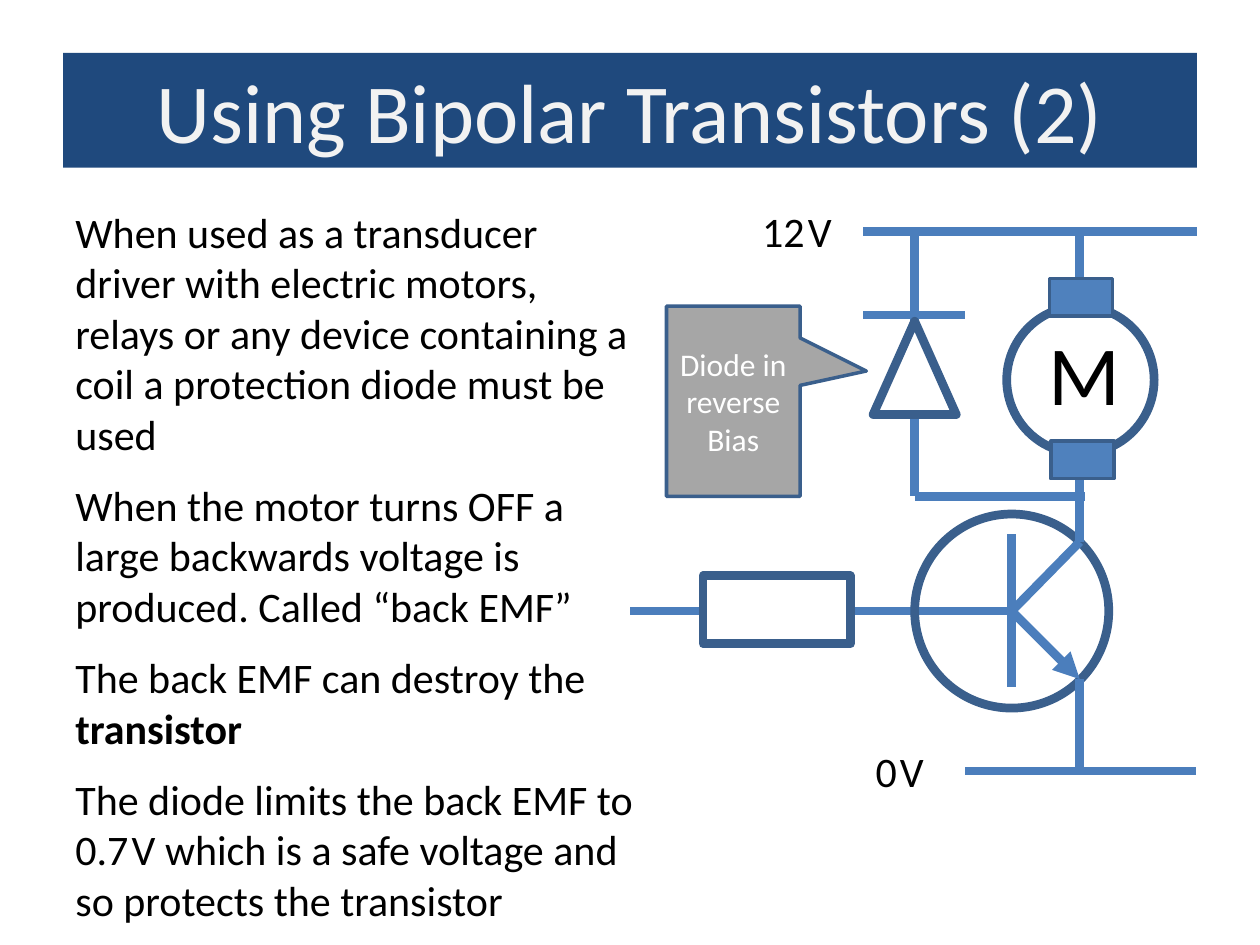
from dataclasses import dataclass

from pptx import Presentation
from pptx.dml.color import RGBColor
from pptx.enum.shapes import MSO_CONNECTOR, MSO_SHAPE
from pptx.enum.text import MSO_ANCHOR, MSO_AUTO_SIZE, PP_ALIGN
from pptx.oxml.ns import qn
from pptx.util import Inches, Pt
from lxml import etree

STRAIGHT = MSO_CONNECTOR.STRAIGHT
OVAL, RECT = MSO_SHAPE.OVAL, MSO_SHAPE.RECTANGLE
TRIANGLE, CALLOUT = MSO_SHAPE.ISOSCELES_TRIANGLE, MSO_SHAPE.RECTANGULAR_CALLOUT
TOP, MIDDLE = MSO_ANCHOR.TOP, MSO_ANCHOR.MIDDLE
LEFT, CENTER = PP_ALIGN.LEFT, PP_ALIGN.CENTER
NO_FIT = MSO_AUTO_SIZE.NONE


@dataclass(frozen=True)
class Theme:
    font: str = "Calibri"
    banner: str = "1F497D"
    banner_text: str = "F2F2F2"
    text: str = "000000"
    wire: str = "4B7EBC"
    outline: str = "3A5F8C"
    terminal: str = "4F81BD"
    note: str = "A6A6A6"
    note_text: str = "FFFFFF"
    heading: int = 48
    body: int = 24
    small: int = 18
    gap: int = 8
    thick: int = 5
    thin: int = 2


T = Theme()
GAP = (" ", {"size": Pt(T.gap)})

BODY = [
    ["When used as a transducer driver with electric motors, relays or any "
     "device containing a coil a protection diode must be used"],
    ["When the motor turns OFF a large backwards voltage is produced. "
     "Called “back EMF”"],
    ["The back EMF can destroy the ", ("transistor", {"bold": True})],
    ["The diode limits the back EMF to 0.7", GAP,
     "V which is a safe voltage and so protects the transistor"],
]

SUPPLY_Y, GROUND_Y = 1.84, 6.12
BASE_X, BASE_Y = 8.03, 4.85
MOTOR_X, DIODE_X = 8.57, 7.26
COLLECTOR_Y, EMITTER_Y = 4.3, 5.39
CATHODE_Y, ANODE_Y, JOIN_Y = 2.5, 3.29, 3.94

WIRES = [
    (BASE_X, 4.24, BASE_X, 5.45),
    (6.76, BASE_Y, BASE_X, BASE_Y),
    (5, BASE_Y, 5.58, BASE_Y),
    (6.85, SUPPLY_Y, 9.5, SUPPLY_Y),
    (7.66, GROUND_Y, 9.49, GROUND_Y),
    (MOTOR_X, SUPPLY_Y, MOTOR_X, 2.43),
    (6.85, CATHODE_Y, 7.66, CATHODE_Y),
    (DIODE_X, SUPPLY_Y, DIODE_X, 2.55),
    (DIODE_X, ANODE_Y, DIODE_X, JOIN_Y),
    (DIODE_X, JOIN_Y, 8.61, JOIN_Y),
]
TRANSISTOR_LEGS = [
    (BASE_X, BASE_Y, MOTOR_X, COLLECTOR_Y),
    (MOTOR_X, COLLECTOR_Y, MOTOR_X, 3.58),
    (MOTOR_X, EMITTER_Y, MOTOR_X, GROUND_Y),
]
OUTLINES = [
    (OVAL, 7.26, 4.08, 1.54, 1.54),
    (OVAL, 7.99, 2.43, 1.17, 1.17),
    (RECT, 5.58, 4.57, 1.17, 0.54),
    (TRIANGLE, 6.93, 2.55, 0.66, 0.74),
]
TERMINALS = [(RECT, 8.33, 2.21, 0.5, 0.3), (RECT, 8.34, 3.5, 0.5, 0.3)]
LABELS = [
    (["12", GAP, "V"], T.body, 5.95, 1.58, 0.76, 0.5),
    (["0", GAP, "V"], T.body, 6.85, 5.87, 0.59, 0.5),
    (["M"], T.heading, 8.22, 2.5, 0.78, 0.91),
]


def rgb(value):
    return RGBColor.from_string(value)


def apply(target, values):
    for name, value in values.items():
        setattr(target, name, value)


def write(tf, paragraphs, size, color, align=LEFT, after=0, **frame):
    apply(tf, {"auto_size": NO_FIT, "word_wrap": True, **frame})
    for i, runs in enumerate(paragraphs):
        p = tf.paragraphs[0] if i == 0 else tf.add_paragraph()
        apply(p, {"alignment": align, "space_after": Pt(after)})
        for run in runs:
            text, extra = (run, {}) if isinstance(run, str) else run
            r = p.add_run()
            r.text = text
            apply(r.font, {"name": T.font, "size": Pt(size), **extra})
            r.font.color.rgb = rgb(color)


def add_title(s, text):
    sp = s.shapes.title
    apply(sp, {"left": Inches(0.5), "top": Inches(0.42),
               "width": Inches(9), "height": Inches(0.91)})
    sp.fill.solid()
    sp.fill.fore_color.rgb = rgb(T.banner)
    write(sp.text_frame, [[text]], T.heading, T.banner_text, CENTER,
          vertical_anchor=MIDDLE)


def add_text(s, box, paragraphs, size, **options):
    sp = s.shapes.add_textbox(*map(Inches, box))
    write(sp.text_frame, paragraphs, size, T.text, vertical_anchor=TOP, **options)


def add_wire(s, points, arrow=False):
    sp = s.shapes.add_connector(STRAIGHT, *map(Inches, points))
    sp.line.color.rgb = rgb(T.wire)
    sp.line.width = Pt(T.thick)
    if arrow:
        etree.SubElement(sp.line._get_or_add_ln(), qn("a:tailEnd"), type="triangle")
    etree.SubElement(sp._element.spPr, qn("a:effectLst"))


def add_symbol(s, kind, *box, fill=None, width=T.thick):
    sp = s.shapes.add_shape(kind, *map(Inches, box))
    sp.shadow.inherit = False
    if fill:
        sp.fill.solid()
        sp.fill.fore_color.rgb = rgb(fill)
    else:
        sp.fill.background()
    sp.line.color.rgb = rgb(T.outline)
    sp.line.width = Pt(width)
    return sp


def add_callout(s, text):
    sp = add_symbol(s, CALLOUT, 5.29, 2.43, 1.06, 1.51, fill=T.note, width=T.thin)
    sp.adjustments[0], sp.adjustments[1] = 0.996, -0.159
    write(sp.text_frame, [[text]], T.small, T.note_text, CENTER,
          vertical_anchor=MIDDLE)


def add_circuit(s):
    for points in WIRES:
        add_wire(s, points)
    for outline in OUTLINES:
        add_symbol(s, *outline)
    for points in TRANSISTOR_LEGS:
        add_wire(s, points)
    add_wire(s, (BASE_X, BASE_Y, MOTOR_X, EMITTER_Y), arrow=True)
    for terminal in TERMINALS:
        add_symbol(s, *terminal, fill=T.terminal, width=T.thin)
    for runs, size, *box in LABELS:
        add_text(s, box, [runs], size, word_wrap=False)


def main():
    prs = Presentation()
    prs.slide_width, prs.slide_height = Inches(10), Inches(7.5)
    s = prs.slides.add_slide(prs.slide_layouts[5])
    add_title(s, "Using Bipolar Transistors (2)")
    add_text(s, (0.5, 1.59, 4.67, 5.33), BODY, T.body, after=12)
    add_circuit(s)
    add_callout(s, "Diode in reverse Bias")
    prs.save("out.pptx")


if __name__ == "__main__":
    main()
